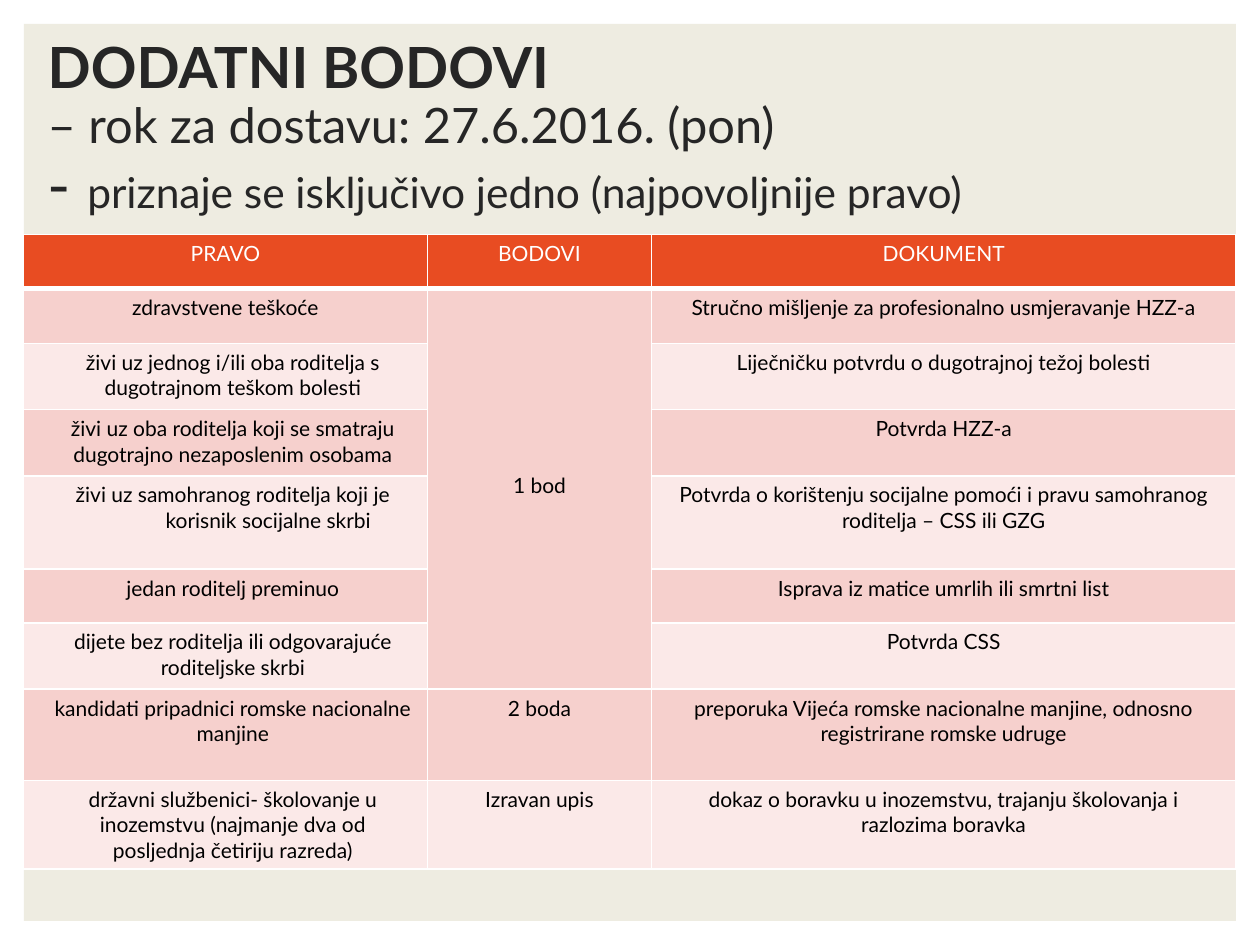
from lxml.etree import SubElement
from pptx import Presentation
from pptx.dml.color import RGBColor as Color
from pptx.enum.shapes import MSO_SHAPE as Shape
from pptx.enum.text import MSO_ANCHOR as Anchor, PP_ALIGN as Align
from pptx.oxml.ns import qn
from pptx.util import Pt

FONT = "Lato"
COLORS = {
    "panel": "EEECE1", "title": "262626", "header": "E84C22", "white": "FFFFFF",
    "black": "000000", "band_dark": "F6D0CD", "band_light": "FBE9E8",
}
TITLE_LINES = [
    [("DODATNI BODOVI ", 32.4, True)],
    [("– rok za dostavu: 27.6.2016. (pon)", 27.9, False)],
    [("- ", 36, False), ("priznaje se isključivo jedno (najpovoljnije pravo)", 24.3, False)],
]
COLUMN_WIDTHS = [231, 128, 334]
ROW_HEIGHTS = [31, 31.4, 37.8, 37.8, 53.2, 30.8, 37.8, 52.4, 50]
ROWS = [
    ("PRAVO", "BODOVI", "DOKUMENT"),
    ("zdravstvene teškoće", "1 bod", "Stručno mišljenje za profesionalno usmjeravanje HZZ-a"),
    ("živi uz jednog i/ili oba roditelja s dugotrajnom teškom bolesti", "",
     "Liječničku potvrdu o dugotrajnoj težoj bolesti"),
    ("živi uz oba roditelja koji se smatraju dugotrajno nezaposlenim osobama", "",
     "Potvrda HZZ-a"),
    ("živi uz samohranog roditelja koji je korisnik socijalne skrbi", "",
     "Potvrda o korištenju socijalne pomoći i pravu samohranog roditelja – CSS ili GZG"),
    ("jedan roditelj preminuo", "", "Isprava iz matice umrlih ili smrtni list"),
    ("dijete bez roditelja ili odgovarajuće roditeljske skrbi", "", "Potvrda CSS"),
    ("kandidati pripadnici romske nacionalne manjine", "2 boda",
     "preporuka Vijeća romske nacionalne manjine, odnosno registrirane romske udruge"),
    ("državni službenici- školovanje u inozemstvu (najmanje dva od posljednja četiriju razreda)",
     "Izravan upis", "dokaz o boravku u inozemstvu, trajanju školovanja i razlozima boravka"),
]
ONE_POINT_ROWS = (1, 6)
HANGING_ROW = 4


def color(name):
    return Color.from_string(COLORS[name])


def add_text(para, text, size=12, bold=False, fill="black"):
    span = para.add_run()
    span.text = text
    span.font.name = FONT
    span.font.size = Pt(size)
    span.font.bold = bold
    span.font.color.rgb = color(fill)


def set_indent(para, left, first=0):
    properties = para._p.get_or_add_pPr()
    properties.set("marL", str(Pt(left)))
    properties.set("indent", str(Pt(first)))


def set_borders(cell, **widths):
    """Draw white borders; lnL, lnR, lnT and lnB are widths in points."""
    properties = cell._tc.get_or_add_tcPr()
    for position, side in enumerate(("lnL", "lnR", "lnT", "lnB")):
        line = SubElement(properties, qn(f"a:{side}"), w=str(Pt(widths.get(side, 1))))
        properties.insert(position, line)
        solid = SubElement(line, qn("a:solidFill"))
        SubElement(solid, qn("a:srgbClr"), val=COLORS["white"])


class SlideBuilder:
    def __init__(self, slide):
        self.slide = slide

    def panel(self, left, top, width, height):
        panel = self.slide.shapes.add_shape(
            Shape.RECTANGLE, Pt(left), Pt(top), Pt(width), Pt(height))
        panel.shadow.inherit = False
        panel.fill.solid()
        panel.fill.fore_color.rgb = color("panel")
        panel.line.fill.background()

    def title(self, lines, left, top, width, height):
        box = self.slide.shapes.add_textbox(Pt(left), Pt(top), Pt(width), Pt(height))
        frame = box.text_frame
        frame.word_wrap = True
        frame.vertical_anchor = Anchor.MIDDLE
        para = frame.paragraphs[0]
        para.line_spacing = 0.9
        for number, line in enumerate(lines):
            if number:
                para.add_line_break()
            for text, size, bold in line:
                add_text(para, text, size=size, bold=bold, fill="title")

    def table(self, rows, left, top):
        table = self.slide.shapes.add_table(
            len(rows), len(COLUMN_WIDTHS), Pt(left), Pt(top),
            Pt(sum(COLUMN_WIDTHS)), Pt(sum(ROW_HEIGHTS))).table
        table.horz_banding = False
        for column, width in zip(table.columns, COLUMN_WIDTHS):
            column.width = Pt(width)
        for row, height in zip(table.rows, ROW_HEIGHTS):
            row.height = Pt(height)
        for row, texts in enumerate(rows):
            for column, text in enumerate(texts):
                self.cell(table.cell(row, column), row, column, text)
        first, last = ONE_POINT_ROWS
        merged = table.cell(first, 1)
        merged.merge(table.cell(last, 1))
        merged.vertical_anchor = Anchor.MIDDLE
        merged.margin_bottom = Pt(8)

    def cell(self, cell, row, column, text):
        band = "band_dark" if row % 2 or column == 1 and row < 7 else "band_light"
        cell.fill.solid()
        cell.fill.fore_color.rgb = color(band if row else "header")
        set_borders(cell, lnT=3 if row == 1 else 1, lnB=1 if row else 3)
        para = cell.text_frame.paragraphs[0]
        para.alignment = Align.CENTER
        para.font.size = Pt(12)
        if text:
            add_text(para, text, fill="black" if row else "white")
        if column == 0 and row == HANGING_ROW:
            set_indent(para, 49, -40.4)
        elif column == 0 and row > 1:
            set_indent(para, 8.6)


def main():
    deck = Presentation()
    deck.slide_width, deck.slide_height = Pt(720), Pt(540)
    builder = SlideBuilder(deck.slides.add_slide(deck.slide_layouts[6]))
    builder.panel(13.7, 13.7, 692.6, 512.6)
    builder.title(TITLE_LINES, 20.2, 20.9, 604.8, 108)
    builder.table(ROWS, 13.3, 134)
    deck.save("out.pptx")


if __name__ == "__main__":
    main()
